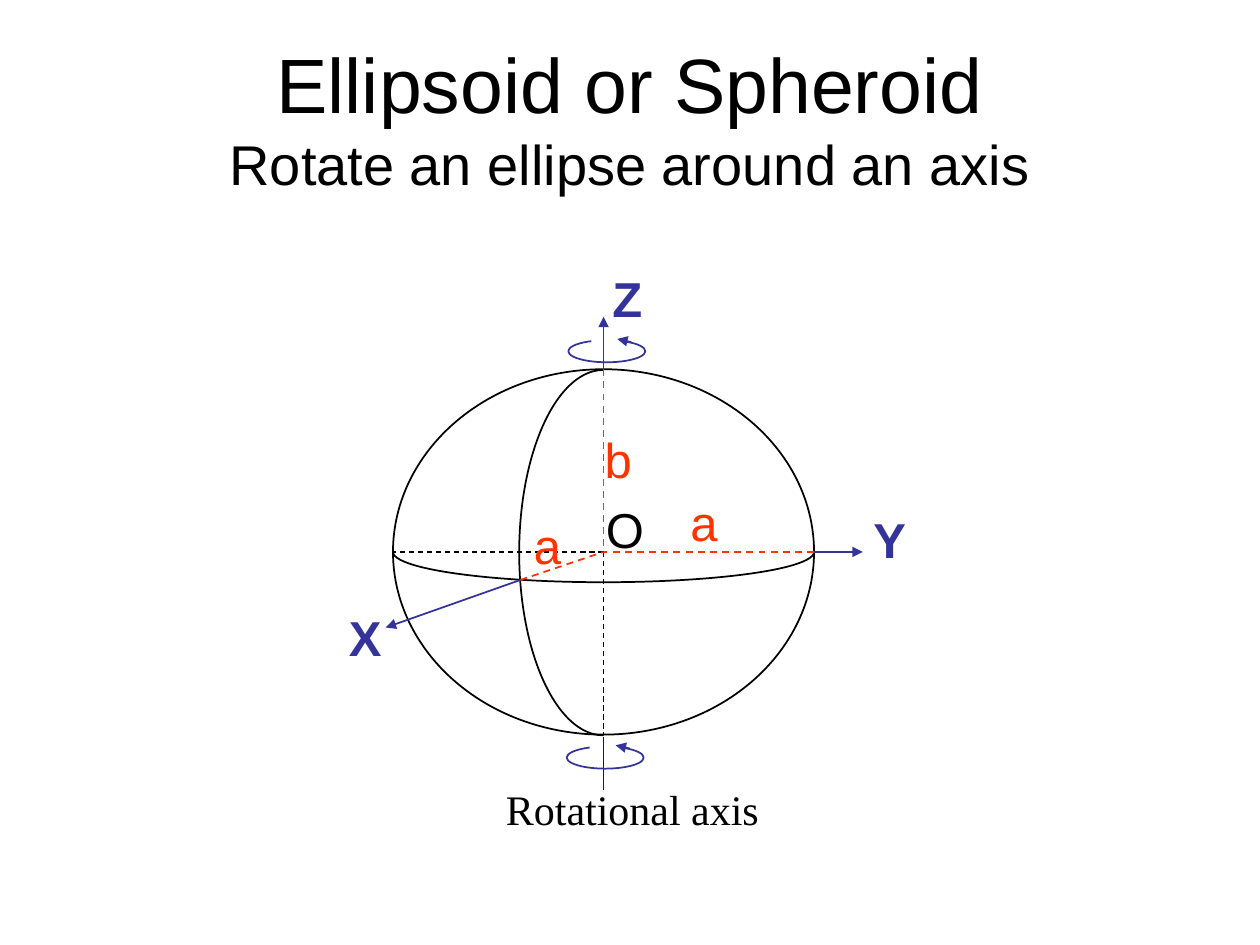
import dataclasses

import lxml.etree
import pptx
import pptx.dml.color
import pptx.enum.dml
import pptx.enum.shapes
import pptx.enum.text
import pptx.oxml.ns
import pptx.util

Pt = pptx.util.Pt
SHAPES = pptx.enum.shapes.MSO_SHAPE


@dataclasses.dataclass(frozen=True)
class Theme:
    """Colours, fonts and sizes of the slide."""

    ink: str = "000000"
    axis: str = "333399"
    pole: str = "0000FF"
    radius: str = "FF3300"
    font: str = "Arial"
    caption_font: str = "Times New Roman"
    title_size: float = 44
    subtitle_size: float = 32
    label_size: float = 28
    caption_size: float = 24
    line_width: float = 1
    thin_width: float = 0.75


class Diagram:
    """Draws styled elements on one slide, with lengths in points."""

    def __init__(self, slide, theme):
        self.slide = slide
        self.theme = theme

    def style_line(self, shape, color, width=None, dashed=False):
        """Set the colour, width and dash of an outline."""
        shape.line.color.rgb = pptx.dml.color.RGBColor.from_string(color)
        shape.line.width = Pt(width or self.theme.line_width)
        if dashed:
            shape.line.dash_style = pptx.enum.dml.MSO_LINE.DASH

    def text_box(self, left, top, width, height, wrap=False):
        """Add an empty text box and return its text frame."""
        frame = self.slide.shapes.add_textbox(Pt(left), Pt(top), Pt(width), Pt(height)).text_frame
        frame.word_wrap = wrap
        return frame

    def style_font(self, font, size, color, name=None, bold=False):
        """Set the look of a font."""
        font.name = name or self.theme.font
        font.size = Pt(size)
        font.bold = bold
        font.color.rgb = pptx.dml.color.RGBColor.from_string(color)

    def title(self, heading, subheading, left, top, width, height):
        """Add a centred heading with a smaller second line."""
        frame = self.text_box(left, top, width, height, wrap=True)
        frame.vertical_anchor = pptx.enum.text.MSO_ANCHOR.MIDDLE
        paragraph = frame.paragraphs[0]
        paragraph.alignment = pptx.enum.text.PP_ALIGN.CENTER
        self.style_font(paragraph.font, self.theme.title_size, self.theme.ink)
        heading_run = paragraph.add_run()
        heading_run.text = heading
        self.style_font(heading_run.font, self.theme.title_size, self.theme.ink)
        paragraph.add_line_break()
        subheading_run = paragraph.add_run()
        subheading_run.text = subheading
        self.style_font(subheading_run.font, self.theme.subtitle_size, self.theme.ink)

    def label(self, text, left, top, width, color, bold=False):
        """Add a one-letter label."""
        paragraph = self.text_box(left, top, width, 41).paragraphs[0]
        paragraph.text = text
        self.style_font(paragraph.font, self.theme.label_size, color, bold=bold)

    def caption(self, text, left, top, width, height):
        """Add a caption in the serif font."""
        paragraph = self.text_box(left, top, width, height).paragraphs[0]
        paragraph.text = text
        self.style_font(paragraph.font, self.theme.caption_size, self.theme.ink, self.theme.caption_font)

    def ellipse(self, center, radius_x, radius_y, color, angles=None):
        """Add a whole ellipse, or the arc between two clockwise angles in degrees."""
        x, y = center
        kind = SHAPES.ARC if angles else SHAPES.OVAL
        shape = self.slide.shapes.add_shape(
            kind, Pt(x - radius_x), Pt(y - radius_y), Pt(2 * radius_x), Pt(2 * radius_y))
        for index, angle in enumerate(angles or ()):
            shape.adjustments[index] = angle * 0.6
        shape.shadow.inherit = False
        shape.fill.background()
        self.style_line(shape, color)

    def line(self, start, end, color, width=None, dashed=False, arrow=False):
        """Add a straight line, with an arrowhead at its end if asked."""
        connector = self.slide.shapes.add_connector(
            pptx.enum.shapes.MSO_CONNECTOR.STRAIGHT, *(Pt(value) for value in (*start, *end)))
        self.style_line(connector, color, width, dashed)
        if arrow:
            line_element = connector.line._get_or_add_ln()
            lxml.etree.SubElement(line_element, pptx.oxml.ns.qn("a:tailEnd"), type="triangle")
        lxml.etree.SubElement(connector._element.spPr, pptx.oxml.ns.qn("a:effectLst"))

    def rotation(self, x, y):
        """Add a turning arrow centred on a point of the rotation axis."""
        self.ellipse((x, y), 22, 6.3, self.theme.axis, (328, 213))
        self.line((x + 13.9, y - 5.2), (x + 5.9, y - 7), self.theme.axis, arrow=True)


def main():
    """Build the spheroid slide."""
    presentation = pptx.Presentation()
    presentation.slide_width, presentation.slide_height = Pt(720), Pt(540)
    theme = Theme()
    diagram = Diagram(presentation.slides.add_slide(presentation.slide_layouts[6]), theme)

    origin_x, origin_y = origin = (344.9, 315.4)
    radius_a, radius_b = 120.3, 104.4
    west, east = (origin_x - radius_a, origin_y), (origin_x + radius_a, origin_y)
    north, south = (origin_x, origin_y - radius_b), (origin_x, origin_y + radius_b)
    front = (297.4, 331.4)

    diagram.title("Ellipsoid or Spheroid", "Rotate an ellipse around an axis", 36, 21.6, 648, 90)
    diagram.ellipse(origin, radius_a, radius_b, theme.ink)
    diagram.ellipse(origin, radius_a, 17.3, theme.ink, (0, 180))
    diagram.ellipse((origin_x, origin_y + 0.4), 48.2, radius_b, theme.ink, (90, 270))

    for hidden_end in (west, south):
        diagram.line(origin, hidden_end, theme.ink, theme.thin_width, dashed=True)
    for surface, tip in ((east, (493, origin_y)), (north, (origin_x, 181)), (front, (220.4, 358.6))):
        diagram.line(surface, tip, theme.axis, arrow=True)
        diagram.line(surface, origin, theme.radius, dashed=True)
    diagram.line((origin_x, 421.4), (origin_x, 451.4), theme.pole, theme.thin_width)
    diagram.rotation(346.8, 200.7)
    diagram.rotation(345.9, 432.9)

    diagram.label("O", 339.1, 282.2, 36, theme.ink)
    for text, left, top, width in (("X", 192.3, 343.6, 33), ("Y", 492, 287.5, 33), ("Z", 342.8, 149.8, 32)):
        diagram.label(text, left, top, width, theme.axis, bold=True)
    for text, left, top in (("a", 298, 291), ("a", 387.5, 278), ("b", 338.4, 242)):
        diagram.label(text, left, top, 30, theme.radius)
    diagram.caption("Rotational axis", 282, 444.4, 159, 36)

    presentation.save("out.pptx")


if __name__ == "__main__":
    main()
